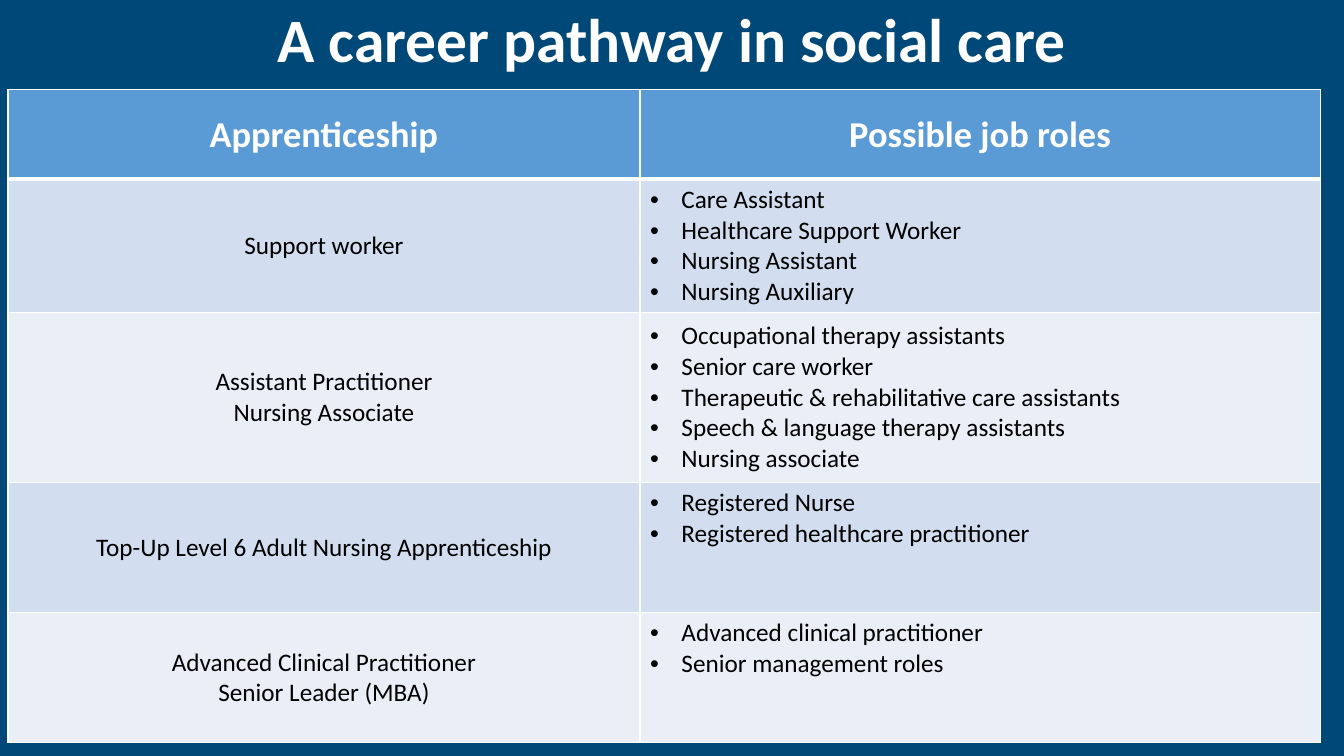
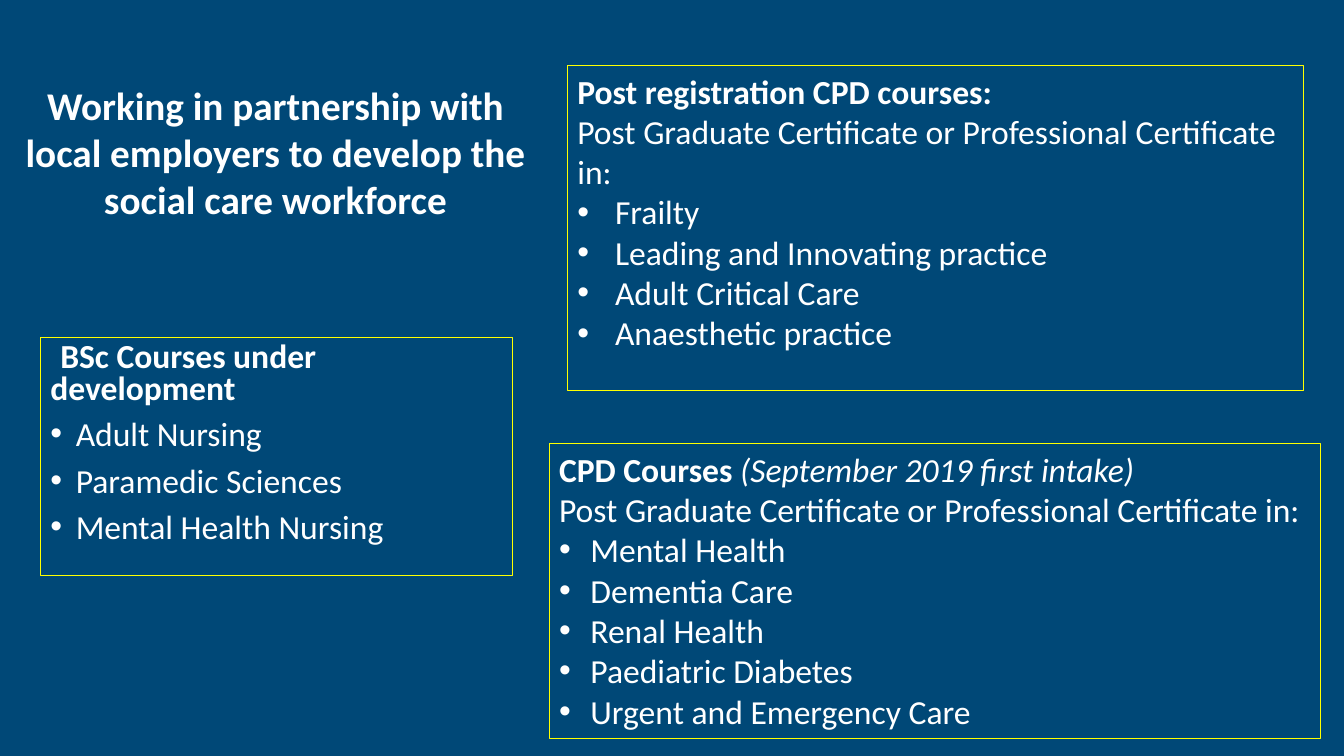
import lxml.etree
import pptx
import pptx.dml.color
import pptx.enum.shapes
import pptx.enum.text
import pptx.oxml.ns
import pptx.util

Cm = pptx.util.Cm
Pt = pptx.util.Pt
RGBColor = pptx.dml.color.RGBColor
Align = pptx.enum.text.PP_ALIGN
Anchor = pptx.enum.text.MSO_ANCHOR
qn = pptx.oxml.ns.qn

NAVY = RGBColor(0x00, 0x48, 0x77)
WHITE = RGBColor(0xFF, 0xFF, 0xFF)
BLACK = RGBColor(0x00, 0x00, 0x00)
YELLOW = RGBColor(0xFF, 0xFF, 0x00)
BLUE = RGBColor(0x5B, 0x9B, 0xD5)
BAND_DARK = RGBColor(0xD2, 0xDE, 0xEF)
BAND_LIGHT = RGBColor(0xEA, 0xEF, 0xF7)

TITLE = {"size": Pt(44), "color": WHITE, "bold": True}
HEADING = {"size": Pt(28), "color": WHITE, "bold": True}
HEADER = {"size": Pt(26), "color": WHITE, "bold": True}
CELL = {"size": Pt(18), "color": BLACK, "bold": False}
BODY = {"size": Pt(24), "color": WHITE, "bold": False}
STRONG = {**BODY, "bold": True}
ITALIC = {**BODY, "italic": True}


def add_para(frame, runs, bullet_indent=None, **para_format):
    """Fill the frame's empty first paragraph or append one; runs are (text, look) pairs."""
    para = frame.paragraphs[0]
    if para.runs:
        para = frame.add_paragraph()
    if bullet_indent:
        properties = para._p.get_or_add_pPr()
        properties.set("marL", str(bullet_indent))
        properties.set("indent", str(-bullet_indent))
        lxml.etree.SubElement(properties, qn("a:buFont"), typeface="Arial")
        lxml.etree.SubElement(properties, qn("a:buChar"), char="•")
    for name, value in para_format.items():
        setattr(para, name, value)
    for text, look in runs:
        span = para.add_run()
        span.text = text
        span.font.name = "Calibri"
        for name, value in look.items():
            if name == "color":
                span.font.color.rgb = value
            else:
                setattr(span.font, name, value)
    return para


def style_cell(cell, color, bottom_width):
    """Give a cell white borders and a solid fill."""
    properties = cell._tc.get_or_add_tcPr()
    for side, width in (("L", 1), ("R", 1), ("T", 1), ("B", bottom_width)):
        line = lxml.etree.SubElement(properties, qn(f"a:ln{side}"), w=str(Pt(width)))
        solid = lxml.etree.SubElement(line, qn("a:solidFill"))
        lxml.etree.SubElement(solid, qn("a:srgbClr"), val=str(WHITE))
    cell.fill.solid()
    cell.fill.fore_color.rgb = color


deck = pptx.Presentation()
deck.slide_width = Cm(33.87)
deck.slide_height = Cm(19.05)
deck.slide_master.background.fill.solid()
deck.slide_master.background.fill.fore_color.rgb = NAVY
blank = deck.slide_layouts[6]

# Career pathway
page = deck.slides.add_slide(blank)
title = page.shapes.add_textbox(Cm(2.34), Cm(-0.1), Cm(29.21), Cm(2.36)).text_frame
title.word_wrap = True
title.vertical_anchor = Anchor.MIDDLE
add_para(title, [("A career pathway in social care", TITLE)], alignment=Align.CENTER, line_spacing=0.9)

pathway = [
    (["Support worker"],
     ["Care Assistant", "Healthcare Support Worker", "Nursing Assistant", "Nursing Auxiliary"]),
    (["Assistant Practitioner", "Nursing Associate"],
     ["Occupational therapy assistants", "Senior care worker",
      "Therapeutic & rehabilitative care assistants",
      "Speech & language therapy assistants", "Nursing associate"]),
    (["Top-Up Level 6 Adult Nursing Apprenticeship"],
     ["Registered Nurse", "Registered healthcare practitioner"]),
    (["Advanced Clinical Practitioner", "Senior Leader (MBA)"],
     ["Advanced clinical practitioner", "Senior management roles"]),
]
column_widths = [15.93, 17.15]
row_heights = [2.26, 3.35, 4.29, 3.28, 3.28]
table = page.shapes.add_table(
    len(row_heights), len(column_widths), Cm(0.2), Cm(2.26),
    Cm(sum(column_widths)), Cm(sum(row_heights))).table
for column, width in zip(table.columns, column_widths):
    column.width = Cm(width)
for row, height in zip(table.rows, row_heights):
    row.height = Cm(height)

for cell, label in zip(table.rows[0].cells, ["Apprenticeship", "Possible job roles"]):
    style_cell(cell, BLUE, 3)
    cell.vertical_anchor = Anchor.MIDDLE
    add_para(cell.text_frame, [(label, HEADER)], alignment=Align.CENTER)

for number, (apprenticeships, roles) in enumerate(pathway, start=1):
    apprenticeship_cell, role_cell = table.rows[number].cells
    for cell in (apprenticeship_cell, role_cell):
        style_cell(cell, BAND_DARK if number % 2 else BAND_LIGHT, 1)
    apprenticeship_cell.vertical_anchor = Anchor.MIDDLE
    role_cell.vertical_anchor = Anchor.MIDDLE if number == 2 else Anchor.TOP
    for apprenticeship in apprenticeships:
        add_para(apprenticeship_cell.text_frame, [(apprenticeship, CELL)], alignment=Align.CENTER)
    for role in roles:
        add_para(role_cell.text_frame, [(role, CELL)], bullet_indent=Cm(0.79))

# Courses
page = deck.slides.add_slide(blank)
certificate = [("Post Graduate Certificate or Professional Certificate in:", BODY)]
course_boxes = [
    {"at": (1.02, 8.51, 11.89, 5.99), "indent": 0.64,
     "intro": [[("BSc Courses under development", STRONG)]],
     "courses": ["Adult Nursing", "Paramedic Sciences", "Mental Health Nursing"],
     "first": {"line_spacing": 0.8}, "format": {"line_spacing": 0.8, "space_before": Pt(10)}},
    {"at": (14.3, 1.65, 18.54, 8.2), "indent": 0.95,
     "intro": [[("Post registration CPD courses:", STRONG)], certificate],
     "courses": ["Frailty", "Leading and Innovating practice", "Adult Critical Care",
                 "Anaesthetic practice"],
     "first": {}, "format": {}},
    {"at": (13.84, 11.18, 19.43, 7.44), "indent": 0.79,
     "intro": [[("CPD Courses ", STRONG), ("(September 2019 first intake)", ITALIC)], certificate],
     "courses": ["Mental Health", "Dementia Care", "Renal Health", "Paediatric Diabetes",
                 "Urgent and Emergency Care"],
     "first": {}, "format": {}},
]
for course_box in course_boxes:
    box = page.shapes.add_shape(
        pptx.enum.shapes.MSO_SHAPE.RECTANGLE, *[Cm(length) for length in course_box["at"]])
    box.shadow.inherit = False
    box.fill.background()
    box.line.color.rgb = YELLOW
    box.line.width = Pt(0.75)
    frame = box.text_frame
    frame.word_wrap = True
    frame.vertical_anchor = Anchor.TOP
    for runs in course_box["intro"]:
        para = add_para(frame, runs, alignment=Align.LEFT, **course_box["first"])
        if len(course_box["intro"]) == 1:
            para._p.get_or_add_pPr().set("indent", str(Cm(0.25)))
    for course in course_box["courses"]:
        add_para(frame, [(course, BODY)], bullet_indent=Cm(course_box["indent"]),
                 alignment=Align.LEFT, **course_box["format"])

heading = page.shapes.add_textbox(Cm(0.3), Cm(1.93), Cm(13.28), Cm(3.84)).text_frame
heading.word_wrap = True
add_para(heading, [("Working in partnership with local employers to develop the social care workforce",
                    HEADING)], alignment=Align.CENTER)

deck.save("out.pptx")
